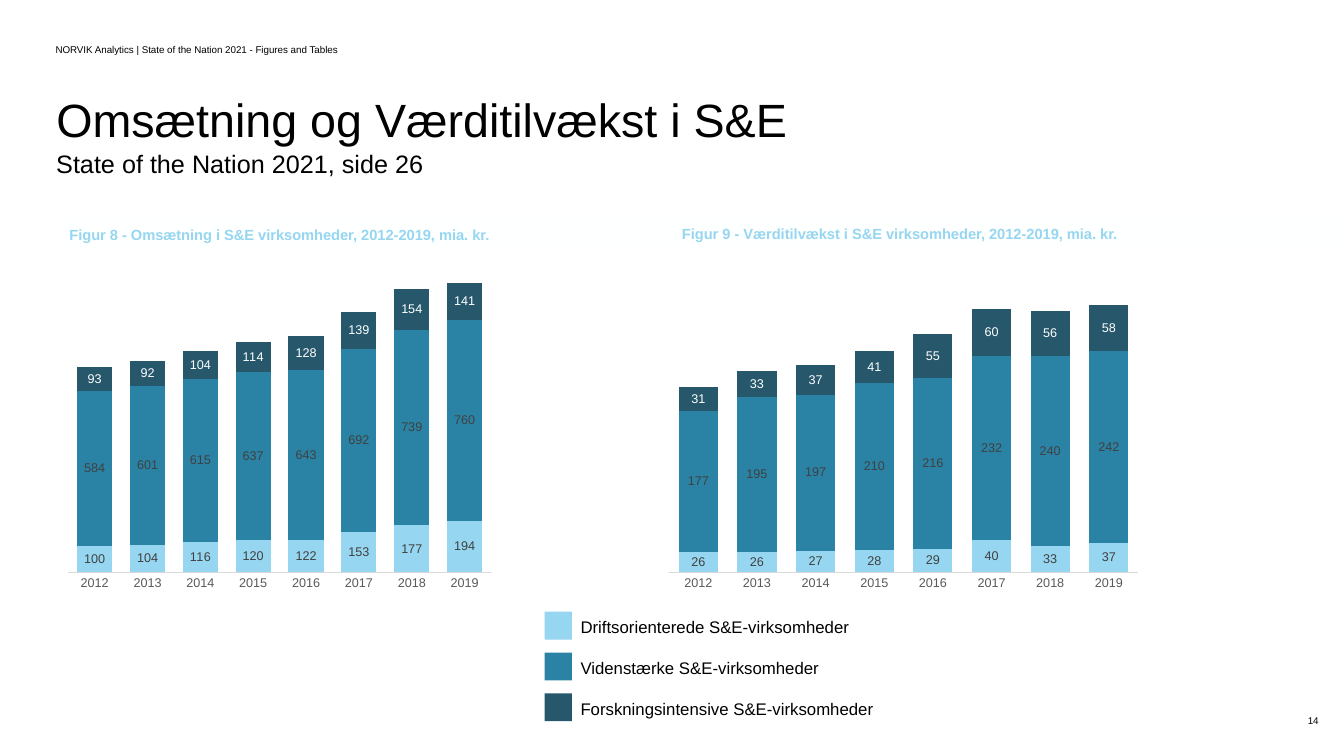
import pptx
import pptx.chart.data
import pptx.dml.color
import pptx.enum.chart
import pptx.enum.shapes
import pptx.enum.text
import pptx.oxml
import pptx.util

Pt = pptx.util.Pt
ANCHOR = pptx.enum.text.MSO_ANCHOR
ALIGN = pptx.enum.text.PP_ALIGN

# Content
HEADER = "NORVIK Analytics | State of the Nation 2021 - Figures and Tables"
TITLE = "Omsætning og Værditilvækst i S&E"
SUBTITLE = "State of the Nation 2021, side 26"
PAGE_NUMBER = "14"
YEARS = [str(year) for year in range(2012, 2020)]
SERIES = [  # legend text, fill, label colour
    ("Driftsorienterede S&E-virksomheder", "light", "label"),
    ("Videnstærke S&E-virksomheder", "middle", "label"),
    ("Forskningsintensive S&E-virksomheder", "dark", "white"),
]
FIGURES = [
    dict(
        title="Figur 8 - Omsætning i S&E virksomheder, 2012-2019, mia. kr.",
        title_at=(42.5, 157.7), chart_left=42.5, chart_width=314.6, top_value=1200,
        values=[
            (100, 104, 116, 120, 122, 153, 177, 194),
            (584, 601, 615, 637, 643, 692, 739, 760),
            (93, 92, 104, 114, 128, 139, 154, 141),
        ],
    ),
    dict(
        title="Figur 9 - Værditilvækst i S&E virksomheder, 2012-2019, mia. kr.",
        title_at=(480, 157), chart_left=470.9, chart_width=349.2, top_value=400,
        values=[
            (26, 26, 27, 28, 29, 40, 33, 37),
            (177, 195, 197, 210, 216, 232, 240, 242),
            (31, 33, 37, 41, 55, 60, 56, 58),
        ],
    ),
]

THEME = dict(
    font="Arial",
    colors=dict(black="000000", white="FEFFFF", light="96D6F1", middle="2A83A5",
                dark="27576B", label="404040", axis="595959", line="D9D9D9"),
    sizes=dict(small=7, title=33.3, subtitle=18, figure=10.5, legend=12, chart=10, label=9),
)
NUMBER_FORMAT = '_-* #,##0_-;\\-* #,##0_-;_-* "-"??_-;_-@_'
CHART_TOP, CHART_HEIGHT = 177.1, 249.1
PLOT_AREA = dict(x=0.02, y=0.02, w=0.96, h=0.91)  # shares of the chart
LEGEND_LEFT, LEGEND_TOP, LEGEND_STEP = 389, 437, 29.1
SWATCH = (19.6, 20)


def color(name):
    return pptx.dml.color.RGBColor.from_string(THEME["colors"][name])


def set_font(font, size, color_name, bold=False):
    font.name = THEME["font"]
    font.size = Pt(THEME["sizes"][size])
    font.bold = bold
    font.color.rgb = color(color_name)


def add_text(page, text, left, top, width, height, size, color_name="black", bold=False,
             anchor=ANCHOR.TOP, align=ALIGN.LEFT, line_spacing=1.0):
    box = page.shapes.add_textbox(Pt(left), Pt(top), Pt(width), Pt(height))
    frame = box.text_frame
    frame.word_wrap = True
    frame.vertical_anchor = anchor
    para = frame.paragraphs[0]
    para.alignment = align
    para.line_spacing = line_spacing
    span = para.add_run()
    span.text = text
    set_font(span.font, size, color_name, bold)
    return box


def add_swatch(page, left, top, fill):
    swatch = page.shapes.add_shape(pptx.enum.shapes.MSO_SHAPE.RECTANGLE,
                                   Pt(left), Pt(top), Pt(SWATCH[0]), Pt(SWATCH[1]))
    swatch.shadow.inherit = False
    swatch.fill.solid()
    swatch.fill.fore_color.rgb = color(fill)
    swatch.line.fill.background()


def fix_plot_area(chart):
    namespace = "http://schemas.openxmlformats.org/drawingml/2006/chart"
    edges = "".join(f'<c:{key} val="{share}"/>' for key, share in PLOT_AREA.items())
    layout = pptx.oxml.parse_xml(
        f'<c:layout xmlns:c="{namespace}"><c:manualLayout><c:layoutTarget val="inner"/>'
        f'<c:xMode val="edge"/><c:yMode val="edge"/>{edges}</c:manualLayout></c:layout>')
    plot_area = chart.element.find(f".//{{{namespace}}}plotArea")
    for old in plot_area.findall(f"{{{namespace}}}layout"):
        plot_area.remove(old)
    plot_area.insert(0, layout)


def add_figure(page, figure):
    title = add_text(page, figure["title"], *figure["title_at"], 480, 20, "figure", "light", bold=True)
    title.fill.solid()
    title.fill.fore_color.rgb = color("white")

    data = pptx.chart.data.CategoryChartData(number_format=NUMBER_FORMAT)
    data.categories = YEARS
    for (name, _, _), values in zip(SERIES, figure["values"]):
        data.add_series(name, values)
    chart = page.shapes.add_chart(
        pptx.enum.chart.XL_CHART_TYPE.COLUMN_STACKED, Pt(figure["chart_left"]), Pt(CHART_TOP),
        Pt(figure["chart_width"]), Pt(CHART_HEIGHT), data).chart
    chart.has_legend = False
    chart.has_title = False
    set_font(chart.font, "chart", "black")
    fix_plot_area(chart)

    # Axes
    years = chart.category_axis
    years.major_tick_mark = pptx.enum.chart.XL_TICK_MARK.NONE
    years.format.line.color.rgb = color("line")
    years.format.line.width = Pt(0.75)
    set_font(years.tick_labels.font, "label", "axis")
    amounts = chart.value_axis
    amounts.minimum_scale = 0
    amounts.maximum_scale = figure["top_value"]
    amounts.has_major_gridlines = False
    amounts.visible = False

    # Columns and their labels
    plot = chart.plots[0]
    plot.vary_by_categories = False
    plot.gap_width = 50
    plot.overlap = 100
    for series, (_, fill, label_color) in zip(plot.series, SERIES):
        series.format.fill.solid()
        series.format.fill.fore_color.rgb = color(fill)
        labels = series.data_labels
        labels.show_value = True
        labels.number_format = NUMBER_FORMAT
        labels.number_format_is_linked = False
        set_font(labels.font, "label", label_color)


def main():
    deck = pptx.Presentation()
    deck.slide_width, deck.slide_height = Pt(960), Pt(540)
    page = deck.slides.add_slide(deck.slide_layouts[6])

    # Page number, header and titles
    add_text(page, PAGE_NUMBER, 733, 500.4, 216, 28.8, "small", anchor=ANCHOR.MIDDLE, align=ALIGN.RIGHT)
    add_text(page, HEADER, 32.6, 20.9, 324, 28.8, "small", anchor=ANCHOR.MIDDLE)
    add_text(page, TITLE, 33.1, 66.2, 832, 41.8, "title", anchor=ANCHOR.BOTTOM, line_spacing=0.8)
    add_text(page, SUBTITLE, 33.1, 102.5, 344, 28.8, "subtitle")

    # Figures
    for figure in FIGURES:
        add_figure(page, figure)

    # Shared legend
    for row, (name, fill, _) in enumerate(SERIES):
        top = LEGEND_TOP + row * LEGEND_STEP
        add_swatch(page, LEGEND_LEFT, top, fill)
        add_text(page, name, LEGEND_LEFT + 18.6, top, 252, 21.6, "legend")

    deck.save("out.pptx")


if __name__ == "__main__":
    main()
